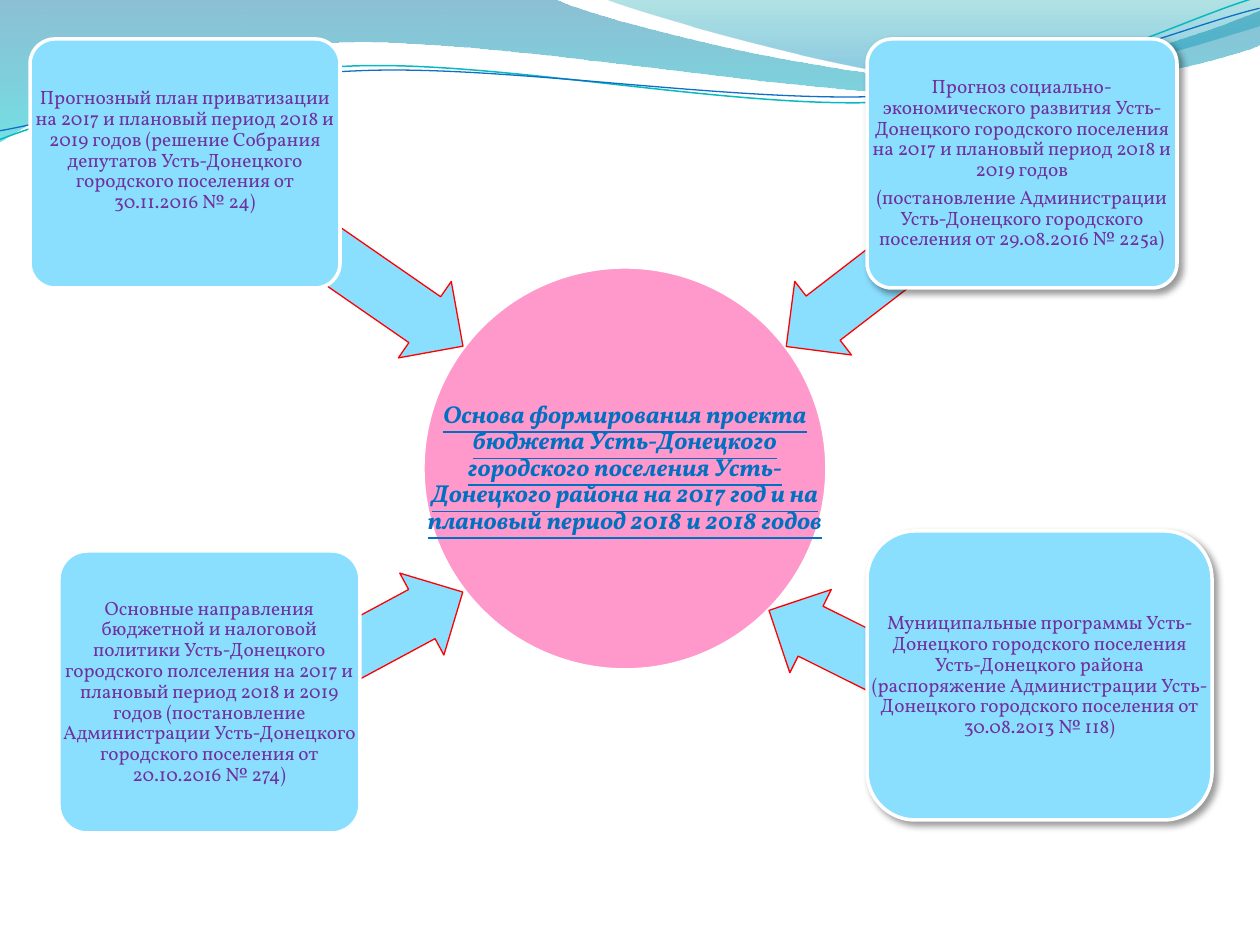
"""Build the slide on the documents behind the settlement budget draft."""
from dataclasses import dataclass
from typing import NamedTuple

from lxml.etree import SubElement
from pptx import Presentation
from pptx.dml.color import RGBColor
from pptx.enum.shapes import MSO_SHAPE
from pptx.enum.text import MSO_ANCHOR, PP_ALIGN
from pptx.oxml import parse_xml
from pptx.oxml.ns import nsdecls, qn
from pptx.shapes.autoshape import Shape
from pptx.slide import Slide
from pptx.util import Emu, Pt

EMU_PER_PX = 914400 / 126


@dataclass(frozen=True)
class Theme:
    font: str = "Vollkorn"
    core_fill: str = "FF99CC"
    core_text: str = "0070C0"
    source_fill: str = "8ADFFF"
    source_text: str = "7030A0"
    outline: str = "FFFFFF"
    arrow_line: str = "FF0000"
    shadow: str = "000000"
    core_size: int = 14
    source_size: int = 11
    outline_width: float = 2
    arrow_width: float = 0.75


class Area(NamedTuple):
    left: int
    top: int
    width: int
    height: int


class Stop(NamedTuple):
    position: int
    color: str
    alpha: int


class Wave(NamedTuple):
    start: tuple[int, int]
    segments: list[tuple[tuple[int, int], ...]]
    stops: tuple[Stop, ...] = ()
    color: str = ""
    width: float = 0
    angle: float = 0


class Source(NamedTuple):
    area: Area
    arrow: Area
    angle: float
    paragraphs: list[str]
    preset: MSO_SHAPE = MSO_SHAPE.ROUNDED_RECTANGLE
    shadow: bool = False
    bottom: int = 2


THEME = Theme()

WAVES = [
    Wave((0, 0), [
        ((554, -1),),
        ((600, 21), (837, 79), (955, 79)),
        ((1075, 79), (1207, 33), (1260, 11)),
        ((1261, 45),),
        ((1239, 55), (1096, 96), (940, 94)),
        ((784, 94), (481, 35), (324, 43)),
        ((163, 45), (58, 105), (-1, 142)),
    ], stops=(Stop(0, "0074A1", 45), Stop(100, "00C6CF", 55))),
    Wave((604, -1), [
        ((641, 14), (859, 78), (969, 82)),
        ((1079, 87), (1211, 40), (1260, 26)),
        ((1260, 0),),
    ], stops=(Stop(0, "00A1A9", 30), Stop(80, "008BBF", 45))),
    Wave((-3, 110), [
        ((58, 90), (199, 52), (349, 53)),
        ((499, 53), (745, 118), (897, 114)),
        ((1050, 109), (1184, 45), (1260, 27)),
    ], color="0AB8BF", width=0.85, angle=357.3),
    Wave((-2, 101), [
        ((57, 94), (207, 57), (357, 58)),
        ((508, 58), (750, 112), (902, 108)),
        ((1053, 104), (1187, 52), (1262, 38)),
    ], color="0F6FC6", width=0.75, angle=357.3),
]

CORE_AREA = Area(423, 267, 404, 403)
CORE_TEXT = ("Основа формирования проекта бюджета Усть-Донецкого городского поселения "
             "Усть-Донецкого района на 2017 год и на плановый период 2018 и 2018 годов")

SOURCES = [
    Source(Area(30, 39, 310, 249), Area(176, 210, 315, 93), 214.7, [
        "Прогнозный план приватизации на 2017 и плановый период 2018 и 2019 годов "
        "(решение Собрания депутатов Усть-Донецкого городского поселения от 30.11.2016 № 24)",
    ], bottom=28),
    Source(Area(59, 551, 301, 282), Area(223, 606, 255, 93), 151.7, [
        "Основные направления бюджетной и налоговой политики Усть-Донецкого городского "
        "полселения на 2017 и плановый период 2018 и 2019 годов (постановление "
        "Администрации Усть-Донецкого городского поселения от 20.10.2016 № 274)",
    ]),
    Source(Area(867, 39, 310, 249), Area(757, 214, 282, 93), 322.4, [
        "Прогноз социально-экономического развития Усть-Донецкого городского поселения "
        "на 2017 и плановый период 2018 и 2019 годов",
        "(постановление Администрации Усть-Донецкого городского поселения от 29.08.2016 № 225а)",
    ], shadow=True),
    Source(Area(867, 531, 345, 289), Area(756, 619, 247, 93), 26.5, [
        "Муниципальные программы Усть-Донецкого городского поселения Усть-Донецкого района "
        "(распоряжение Администрации Усть-Донецкого городского поселения от 30.08.2013 № 118)",
    ], preset=MSO_SHAPE.FLOWCHART_ALTERNATE_PROCESS, shadow=True),
]


def px(length: float) -> Emu:
    return Emu(round(length * EMU_PER_PX))


def bend(shape: Shape, wave: Wave) -> None:
    lines = shape.element.spPr.iter(qn("a:lnTo"))
    remaining = iter(list(lines))
    for segment in wave.segments:
        first, *others = [next(remaining) for _ in segment]
        if others:
            first.tag = qn("a:cubicBezTo")
            for other in others:
                first.append(other[0])
                other.getparent().remove(other)


def draw_wave(slide: Slide, wave: Wave) -> None:
    builder = slide.shapes.build_freeform(*map(px, wave.start))
    builder.add_line_segments([(px(x), px(y)) for segment in wave.segments for x, y in segment],
                              close=bool(wave.stops))
    shape = builder.convert_to_shape()
    bend(shape, wave)
    shape.rotation = wave.angle
    shape.shadow.inherit = False
    shape.fill.background()
    if not wave.stops:
        shape.line.color.rgb = RGBColor.from_string(wave.color)
        shape.line.width = Pt(wave.width)
        return
    shape.line.fill.background()
    stops = "".join(
        f'<a:gs pos="{stop.position * 1000}"><a:srgbClr val="{stop.color}">'
        f'<a:alpha val="{stop.alpha * 1000}"/></a:srgbClr></a:gs>' for stop in wave.stops)
    gradient = parse_xml(f'<a:gradFill {nsdecls("a")}><a:gsLst>{stops}</a:gsLst>'
                         '<a:lin ang="5400000" scaled="0"/></a:gradFill>')
    properties = shape.element.spPr
    properties.replace(properties.find(qn("a:noFill")), gradient)


def draw_shape(slide: Slide, preset: MSO_SHAPE, area: Area, *, fill: str,
               line: str = THEME.outline, width: float = THEME.outline_width) -> Shape:
    shape = slide.shapes.add_shape(preset, *map(px, area))
    shape.shadow.inherit = False
    shape.fill.solid()
    shape.fill.fore_color.rgb = RGBColor.from_string(fill)
    shape.line.color.rgb = RGBColor.from_string(line)
    shape.line.width = Pt(width)
    return shape


def cast_shadow(shape: Shape) -> None:
    effects = shape.element.spPr.find(qn("a:effectLst"))
    outer = SubElement(effects, qn("a:outerShdw"), blurRad=str(Pt(4)), dist=str(Pt(3)),
                       dir="2700000", algn="tl", rotWithShape="0")
    color = SubElement(outer, qn("a:srgbClr"), val=THEME.shadow)
    SubElement(color, qn("a:alpha"), val="40000")


def write_text(slide: Slide, area: Area, paragraphs: list[str], *, size: int, color: str,
               emphasis: bool = False, inset: int = 2, bottom: int = 2) -> None:
    frame = slide.shapes.add_textbox(*map(px, area)).text_frame
    frame.word_wrap = True
    frame.vertical_anchor = MSO_ANCHOR.MIDDLE
    frame.margin_left = frame.margin_right = frame.margin_top = px(inset)
    frame.margin_bottom = px(bottom)
    frame.text = "\n".join(paragraphs)
    for paragraph in frame.paragraphs:
        paragraph.alignment = PP_ALIGN.CENTER
        paragraph.line_spacing = 0.9
        paragraph.space_after = Pt(4)
        font = paragraph.runs[0].font
        font.name, font.size = THEME.font, Pt(size)
        font.color.rgb = RGBColor.from_string(color)
        font.bold = font.italic = font.underline = emphasis


def draw_source(slide: Slide, source: Source) -> None:
    arrow = draw_shape(slide, MSO_SHAPE.LEFT_ARROW, source.arrow, fill=THEME.source_fill,
                       line=THEME.arrow_line, width=THEME.arrow_width)
    arrow.rotation = source.angle
    arrow.adjustments[0] = 0.6
    box = draw_shape(slide, source.preset, source.area, fill=THEME.source_fill)
    if source.preset == MSO_SHAPE.ROUNDED_RECTANGLE:
        box.adjustments[0] = 0.1
    if source.shadow:
        cast_shadow(box)
    write_text(slide, source.area, source.paragraphs, size=THEME.source_size,
               color=THEME.source_text, bottom=source.bottom)


def main() -> None:
    deck = Presentation()
    deck.slide_width, deck.slide_height = px(1260), px(945)
    slide = deck.slides.add_slide(deck.slide_layouts[6])
    for wave in WAVES:
        draw_wave(slide, wave)
    draw_shape(slide, MSO_SHAPE.OVAL, CORE_AREA, fill=THEME.core_fill)
    write_text(slide, CORE_AREA, [CORE_TEXT], size=THEME.core_size, color=THEME.core_text,
               emphasis=True, inset=1, bottom=1)
    for source in SOURCES:
        draw_source(slide, source)
    deck.save("out.pptx")


if __name__ == "__main__":
    main()
